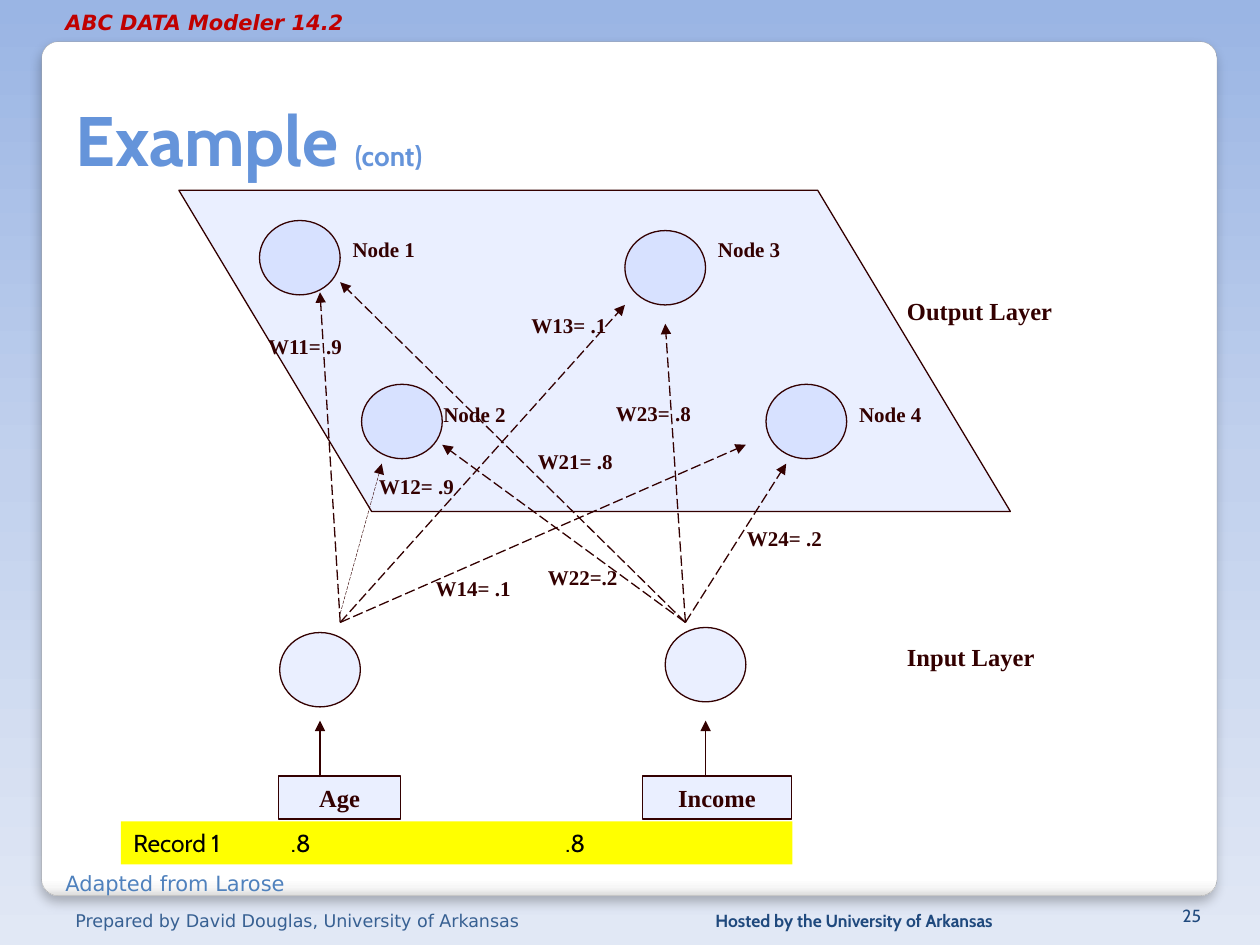
from dataclasses import dataclass

from lxml import etree
from pptx import Presentation
from pptx.dml.color import RGBColor
from pptx.enum import dml, shapes, text
from pptx.oxml import ns
from pptx.util import Pt

PX = 9144
SHAPE = shapes.MSO_SHAPE
ALIGN = text.PP_ALIGN


@dataclass(frozen=True)
class Theme:
    ink: str = "330000"
    tint: str = "3366FF"
    title: str = "6594DA"
    brand: str = "C00000"
    navy: str = "1F497D"
    credit: str = "4F81BD"
    author: str = "376092"
    border: str = "A4A4A4"
    record: str = "FFFF00"
    black: str = "000000"
    sky: tuple = ((0, "9AB5E4"), (50, "C2D1ED"), (100, "E1E8F5"))
    panel: tuple = ((0, "FFFFFF"), (98, "FFFFFF"), (99, "F7F7F7"), (100, "DADADA"))
    sans: str = "Cabin"
    plain: str = "DejaVu Sans"
    serif: str = "Times New Roman"
    heading: int = 40
    aside: int = 16
    large: int = 14
    label: int = 12
    small: int = 10


THEME = Theme()


def emu(*lengths):
    return [length * PX for length in lengths]


def color(code):
    return RGBColor.from_string(code)


def child(parent, tag, **attributes):
    return etree.SubElement(parent, ns.qn(tag), {name: str(value) for name, value in attributes.items()})


def find(parent, tag):
    return parent.find(".//" + ns.qn(tag))


def set_gradient(fill, element, stops):
    fill.gradient()
    fill.gradient_angle = 270
    stop_list = find(element, "a:gsLst")
    for stop in list(stop_list):
        stop_list.remove(stop)
    for position, code in stops:
        child(child(stop_list, "a:gs", pos=position * 1000), "a:srgbClr", val=code)


def style_text(frame, words, name, size, code, bold=False, align=ALIGN.LEFT, wrap=True):
    frame.word_wrap = wrap
    frame.auto_size = text.MSO_AUTO_SIZE.NONE
    para = frame.paragraphs[0]
    para.text = words
    para.alignment = align
    font = para.font
    font.name, font.size, font.bold = name, Pt(size), bold
    font.color.rgb = color(code)
    return para


def add_text(page, box, words, name, size, code, **options):
    holder = page.shapes.add_textbox(*emu(*box))
    return holder.text_frame, style_text(holder.text_frame, words, name, size, code, **options)


def add_label(page, box, words, size=THEME.label):
    add_text(page, box, words, THEME.serif, size, THEME.ink, bold=True)


def add_tinted(page, kind, box):
    shape = page.shapes.add_shape(kind, *emu(*box))
    shape.shadow.inherit = False
    shape.fill.solid()
    shape.fill.fore_color.rgb = color(THEME.tint)
    child(find(shape.element, "a:srgbClr"), "a:alpha", val=10000)
    shape.line.color.rgb = color(THEME.ink)
    shape.line.width = Pt(0.75)
    return shape


def add_arrow(page, start, end, width=0.75, dashed=True):
    arrow = page.shapes.add_connector(shapes.MSO_CONNECTOR.STRAIGHT, *emu(*start, *end))
    arrow.line.color.rgb = color(THEME.ink)
    arrow.line.width = Pt(width)
    if dashed:
        arrow.line.dash_style = dml.MSO_LINE.LONG_DASH
    child(find(arrow.element, "a:ln"), "a:tailEnd", type="triangle")
    child(arrow.element.spPr, "a:effectLst")


def add_panel(page, box):
    panel = page.shapes.add_shape(SHAPE.ROUNDED_RECTANGLE, *emu(*box))
    panel.adjustments[0] = 0.02
    set_gradient(panel.fill, panel.element, THEME.panel)
    panel.line.color.rgb = color(THEME.border)
    panel.line.width = Pt(0.16)
    panel.shadow.inherit = False
    shadow = child(find(panel.element, "a:effectLst"), "a:outerShdw",
                   blurRad=Pt(6), dist=Pt(4), dir=5400000, algn="t", rotWithShape=0)
    child(child(shadow, "a:srgbClr", val=THEME.black), "a:alpha", val=25000)


def add_header(page, box):
    left, top, width, height = box
    _, brand = add_text(page, (left - 8, top - 30, 241, 30), "ABC DATA Modeler 14.2",
                        THEME.plain, THEME.label, THEME.brand, bold=True, wrap=False)
    brand.font.italic = True
    title = page.shapes.title
    title.left, title.top, title.width, title.height = emu(*box)
    title.text_frame.vertical_anchor = text.MSO_ANCHOR.BOTTOM
    para = style_text(title.text_frame, "Example ", THEME.sans, THEME.heading, THEME.title, bold=True)
    span = para.add_run()
    span.text = "(cont)"
    span.font.size = Pt(THEME.aside)
    title.element.getparent().append(title.element)


def add_footer(page, box):
    left, top, width, height = box
    add_text(page, (left + 508, top, 342, height), "Hosted by the University of Arkansas",
             THEME.sans, THEME.small, THEME.navy, bold=True)
    number, _ = add_text(page, (left + width - 50, top, 50, height), "25",
                         THEME.sans, THEME.small, THEME.navy, align=ALIGN.RIGHT)
    number.vertical_anchor = text.MSO_ANCHOR.BOTTOM
    add_text(page, (left - 8, top - 31, 283, 30), "Adapted from Larose",
             THEME.plain, THEME.label, THEME.credit)
    add_text(page, (left, top, 446, height), "Prepared by David Douglas, University of Arkansas",
             THEME.plain, THEME.small, THEME.author)


def add_network(page, box):
    left, top, width, height = box

    def at(x, y):
        return left + x, top + y

    plane = add_tinted(page, SHAPE.PARALLELOGRAM, (left, top, 660, 255))
    plane.adjustments[0] = 0.6
    find(plane.element, "a:xfrm").set("flipH", "1")

    for x, y in ((64, 24), (354, 32), (145, 154), (466, 154), (80, 351), (386, 347)):
        add_tinted(page, SHAPE.OVAL, (*at(x, y), 64, 59))

    links = {
        (128, 343): ((354, 91), (450, 202), (112, 81)),
        (402, 343): ((209, 202), (128, 73), (482, 217), (386, 106)),
    }
    for start, ends in links.items():
        for end in ends:
            add_arrow(page, at(*start), at(*end))
    add_arrow(page, at(128, 336), at(161, 217), width=0.25)

    labels = (
        ("Node 1", 128, 32), ("Node 3", 418, 32), ("Node 2", 200, 163), ("Node 4", 530, 163),
        ("W11= .9", 61, 109), ("W12= .9", 149, 220), ("W13= .1", 270, 92), ("W14= .1", 194, 301),
        ("W21= .8", 275, 200), ("W22=.2", 283, 292), ("W23= .8", 337, 162), ("W24= .2", 441, 261),
    )
    for words, x, y in labels:
        add_label(page, (*at(x, y), 97, 30), words)

    for words, x, size, feed in (("Age", 79, 97, 112), ("Income", 368, 118, 418)):
        add_arrow(page, at(feed, 466), at(feed, 421), dashed=False)
        field = add_tinted(page, SHAPE.RECTANGLE, (*at(x, 465), size, 34))
        style_text(field.text_frame, words, THEME.serif, THEME.large, THEME.ink,
                   bold=True, align=ALIGN.CENTER)

    for words, y in (("Input Layer", 354), ("Output Layer", 79)):
        add_label(page, (*at(width - 236, y), 236, 33), words, THEME.large)


def add_record(page, box):
    bar = page.shapes.add_shape(SHAPE.RECTANGLE, *emu(*box))
    bar.shadow.inherit = False
    bar.fill.solid()
    bar.fill.fore_color.rgb = color(THEME.record)
    bar.line.fill.background()
    para = style_text(bar.text_frame, "Record 1\t.8\t.8", THEME.sans, THEME.large, THEME.black)
    tabs = etree.Element(ns.qn("a:tabLst"))
    for position in (125, 343):
        child(tabs, "a:tab", pos=position * PX, algn="l")
    find(bar.element, "a:defRPr").addprevious(tabs)


def main():
    deck = Presentation()
    deck.slide_width, deck.slide_height = emu(1000, 750)
    page = deck.slides.add_slide(deck.slide_layouts[5])
    set_gradient(page.background.fill, page.element, THEME.sky)
    add_panel(page, (33, 33, 933, 678))
    add_header(page, (50, 33, 895, 115))
    add_footer(page, (50, 717, 913, 23))
    add_network(page, (142, 151, 804, 499))
    add_record(page, (96, 652, 533, 34))
    deck.save("out.pptx")


if __name__ == "__main__":
    main()
